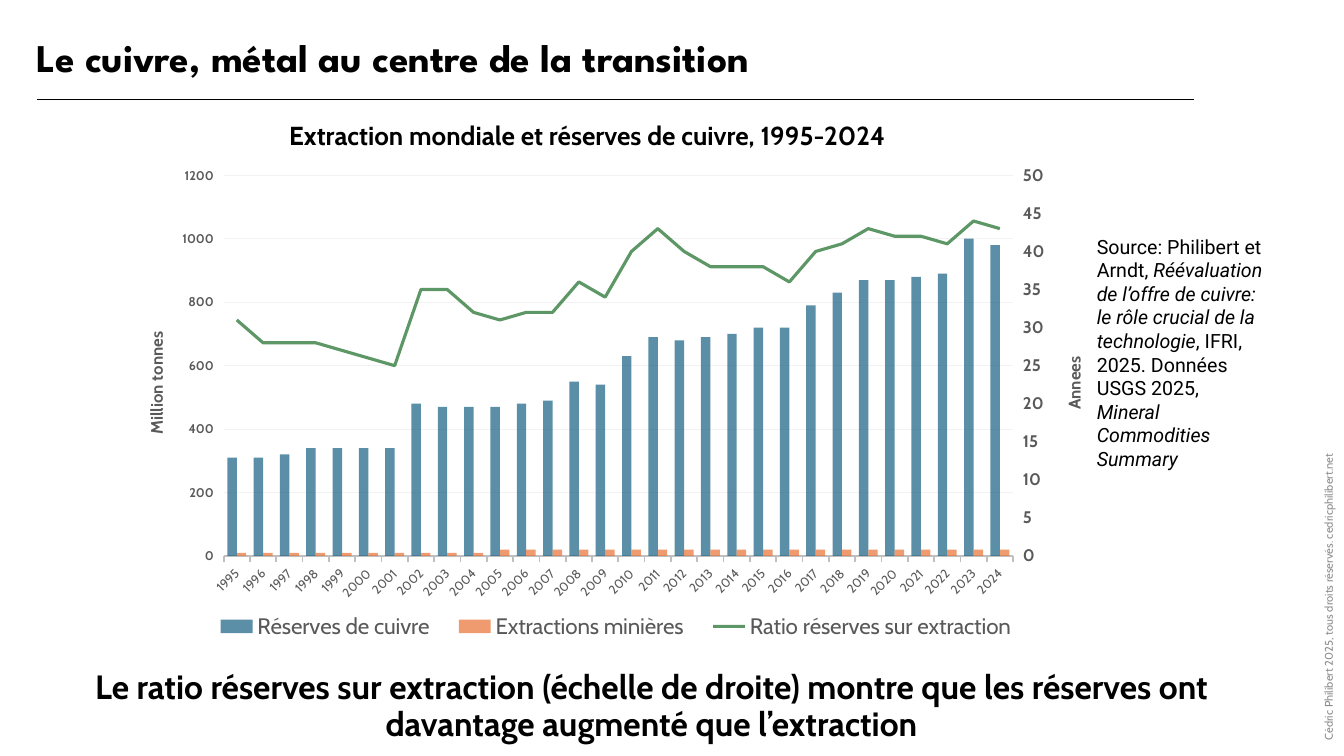
"""Build the slide on copper reserves and mining."""
from copy import deepcopy
from dataclasses import dataclass

from lxml import etree
from pptx import Presentation, oxml, util as u
from pptx.chart import axis as ax, data
from pptx.dml.color import RGBColor
from pptx.enum import chart as ch, shapes as sh, text as tx
from pptx.oxml import ns


@dataclass(frozen=True)
class Theme:
    """Colours, fonts and type sizes."""
    ink: str = "000000"
    grey: str = "595959"
    pale: str = "8C8C8C"
    rule: str = "BFBFBF"
    grid: str = "F2F2F2"
    blue: str = "156082"
    coral: str = "E97132"
    green: str = "196B24"
    head: str = "League Spartan"
    main: str = "Cabin"
    note: str = "Roboto"
    title: float = 28
    claim: float = 24
    sub: float = 18.6
    key: float = 16
    body: float = 14
    label: float = 12
    tick: float = 9
    small: float = 8


T = Theme()


@dataclass(frozen=True)
class Box:
    """A text with its frame and format; odd runs are italic."""
    at: tuple[float, float, float, float]
    runs: tuple[str, ...]
    size: float
    font: str = T.main
    color: str = T.ink
    bold: bool = False
    align: tx.PP_ALIGN = tx.PP_ALIGN.LEFT
    anchor: tx.MSO_ANCHOR = tx.MSO_ANCHOR.TOP
    inset: float = 0
    space: float = 1
    turn: float = 0


TITLE = Box((0.36, 0.33, 11.48, 0.63), ("Le cuivre, métal au centre de la transition",),
            T.title, T.head, bold=True, space=0.9)
BOXES = (
    Box((2.77, 1.14, 9.02, 0.42), ("Extraction mondiale et réserves de cuivre, 1995-2024",),
        T.sub, bold=True, inset=0.1),
    Box((10.78, 2.28, 1.86, 2.69),
        ("Source: Philibert et Arndt, ",
         "Réévaluation de l’offre de cuivre: le rôle crucial de la technologie",
         ", IFRI, 2025. Données USGS 2025, ", "Mineral Commodities Summary"),
        T.body, T.note, inset=0.1),
    Box((0.93, 6.7, 11.16, 0.63),
        ("Le ratio réserves sur extraction (échelle de droite) montre que les réserves ont "
         "davantage augmenté que l’extraction",),
        T.claim, bold=True, align=tx.PP_ALIGN.CENTER, anchor=tx.MSO_ANCHOR.MIDDLE, space=0.9),
    Box((10.54, 4.62, 5.27, 0.18),
        ("Cédric Philibert 2025, tous droits réservés. cedricphilibert.net",),
        T.small, color=T.pale, anchor=tx.MSO_ANCHOR.MIDDLE, turn=270),
)
SERIES = (
    ("Réserves de cuivre", T.blue,
     [310, 310, 320, 340, 340, 340, 340, 480, 470, 470, 470, 480, 490, 550, 540,
      630, 690, 680, 690, 700, 720, 720, 790, 830, 870, 870, 880, 890, 1000, 980]),
    ("Extractions minières", T.coral, [10] * 10 + [20] * 20),
    ("Ratio réserves sur extraction", T.green,
     [31, 28, 28, 28, 27, 26, 25, 35, 35, 32, 31, 32, 32, 36, 34,
      40, 43, 40, 38, 38, 38, 36, 40, 41, 43, 42, 42, 41, 44, 43]),
)
PLOT = {"x": 0.086, "y": 0.034, "w": 0.833, "h": 0.714}
LEGEND = {"x": 0.06, "y": 0.85, "w": 0.88, "h": 0.06}


def rgb(color: str) -> RGBColor:
    """Turn a hex string into a colour."""
    return RGBColor.from_string(color)


def style(font, size: float, color: str, bold: bool = False, name: str = T.main) -> None:
    """Set the main traits of a font."""
    font.size, font.bold, font.name = u.Pt(size), bold, name
    font.color.rgb = rgb(color)


def place(shape, box: Box) -> None:
    """Move a shape and fill it with the text of a box."""
    shape.left, shape.top, shape.width, shape.height = map(u.Inches, box.at)
    shape.rotation = box.turn
    frame = shape.text_frame
    frame.word_wrap, frame.auto_size = True, tx.MSO_AUTO_SIZE.NONE
    frame.vertical_anchor = box.anchor
    frame.margin_left, frame.margin_right = u.Inches(box.inset), u.Inches(0.1)
    frame.margin_top = frame.margin_bottom = u.Inches(0.05)
    para = frame.paragraphs[0]
    para.alignment, para.line_spacing = box.align, box.space
    style(para.font, box.size, box.color, box.bold, box.font)
    for num, part in enumerate(box.runs):
        run = para.add_run()
        run.text = part
        if num % 2:
            run.font.italic = True


def scale(axis: ax.ValueAxis, name: str, top: float, step: float, size: float) -> None:
    """Format a value axis and its title."""
    axis.minimum_scale, axis.maximum_scale, axis.major_unit = 0, top, step
    axis.major_tick_mark = ch.XL_TICK_MARK.OUTSIDE
    axis.format.line.fill.background()
    style(axis.tick_labels.font, size, T.grey, True)
    frame = axis.axis_title.text_frame
    frame.text = name
    style(frame.paragraphs[0].font, T.label, T.grey, True)


def settle(part, index: int, spots: dict[str, float], target: str = "") -> None:
    """Give a chart part a fixed place, as shares of the chart."""
    for old in part.xpath("c:layout"):
        part.remove(old)
    sizes = "".join(f'<c:{key} val="{value}"/>' for key, value in spots.items())
    part.insert(index, oxml.parse_xml(
        f'<c:layout {ns.nsdecls("c")}><c:manualLayout>{target}'
        f'<c:xMode val="edge"/><c:yMode val="edge"/>{sizes}</c:manualLayout></c:layout>'))


def combine(chart) -> None:
    """Move the ratio to a line plot on a right-hand axis."""
    area = chart.element.xpath("//c:plotArea")[0]
    bars, cat, val = (area.xpath(f"c:{tag}")[0] for tag in ("barChart", "catAx", "valAx"))
    ratio = bars.xpath("c:ser")[-1]
    for old in ratio.xpath("c:invertIfNegative"):
        ratio.remove(old)
    line = oxml.parse_xml(
        f'<c:lineChart {ns.nsdecls("c")}><c:grouping val="standard"/><c:varyColors val="0"/>'
        '<c:marker val="1"/><c:axId val="501"/><c:axId val="502"/></c:lineChart>')
    line.insert(2, ratio)
    ratio.xpath("c:cat")[0].addprevious(oxml.parse_xml(
        f'<c:marker {ns.nsdecls("c")}><c:symbol val="none"/></c:marker>'))
    etree.SubElement(ratio, ns.qn("c:smooth")).set("val", "0")
    bars.addnext(line)
    years, right = deepcopy(cat), deepcopy(val)
    val.addnext(right)
    right.addnext(years)
    for part, traits in ((years, {"axId": "501", "crossAx": "502", "delete": "1"}),
                         (right, {"axId": "502", "crossAx": "501", "axPos": "r",
                                  "crosses": "max"})):
        for tag, value in traits.items():
            part.xpath(f"c:{tag}")[0].set("val", value)
    side = ax.ValueAxis(right)
    side.has_major_gridlines = False
    scale(side, "Annees", 50, 5, T.label)
    settle(area, 0, PLOT, '<c:layoutTarget val="inner"/>')
    settle(chart.element.xpath("//c:legend")[0], 1, LEGEND)
    for spot, turn in (("catAx/c:txPr", -45), ("valAx/c:title", -90)):
        for body in area.xpath(f"c:{spot}//a:bodyPr"):
            body.set("rot", str(turn * 60000))
            body.set("vert", "horz")
    for tint in area.xpath(".//c:ser/c:spPr//a:srgbClr"):
        etree.SubElement(tint, ns.qn("a:alpha")).set("val", "70000")


def graph(slide) -> None:
    """Add the chart of reserves, mining and their ratio."""
    table = data.CategoryChartData()
    table.categories = [str(year) for year in range(1995, 2025)]
    for name, _, values in SERIES:
        table.add_series(name, values)
    chart = slide.shapes.add_chart(
        ch.XL_CHART_TYPE.COLUMN_CLUSTERED,
        *map(u.Inches, (1.41, 1.56, 9.4, 5.29)), table).chart
    style(chart.font, 10, T.ink)
    chart.has_title = False
    chart.has_legend = True
    chart.legend.position = ch.XL_LEGEND_POSITION.BOTTOM
    chart.legend.include_in_layout = False
    style(chart.legend.font, T.key, T.grey)
    plot = chart.plots[0]
    plot.gap_width, plot.overlap, plot.vary_by_categories = 78, 0, False
    *cols, ratio = plot.series
    for col, (_, color, _) in zip(cols, SERIES):
        col.format.fill.solid()
        col.format.fill.fore_color.rgb = rgb(color)
    ratio.format.line.color.rgb = rgb(T.green)
    ratio.format.line.width = u.Pt(2.25)
    cat, val = chart.category_axis, chart.value_axis
    cat.major_tick_mark = ch.XL_TICK_MARK.OUTSIDE
    cat.format.line.color.rgb, cat.format.line.width = rgb(T.rule), u.Pt(1.25)
    style(cat.tick_labels.font, T.tick, T.grey)
    scale(val, "Million tonnes", 1200, 200, T.tick)
    grid = val.major_gridlines.format.line
    grid.color.rgb, grid.width = rgb(T.grid), u.Pt(0.75)
    combine(chart)


def main() -> None:
    """Build and save the slide."""
    deck = Presentation()
    deck.slide_width, deck.slide_height = u.Inches(13.33), u.Inches(7.5)
    slide = deck.slides.add_slide(deck.slide_layouts[5])
    place(slide.shapes.title, TITLE)
    rule = slide.shapes.add_connector(
        sh.MSO_CONNECTOR.STRAIGHT, *map(u.Inches, (0.37, 0.99, 11.84, 0.99)))
    rule.line.color.rgb, rule.line.width = rgb(T.ink), u.Pt(1)
    etree.SubElement(rule.element.spPr, ns.qn("a:effectLst"))
    graph(slide)
    for box in BOXES:
        place(slide.shapes.add_textbox(0, 0, 0, 0), box)
    deck.save("out.pptx")


if __name__ == "__main__":
    main()
